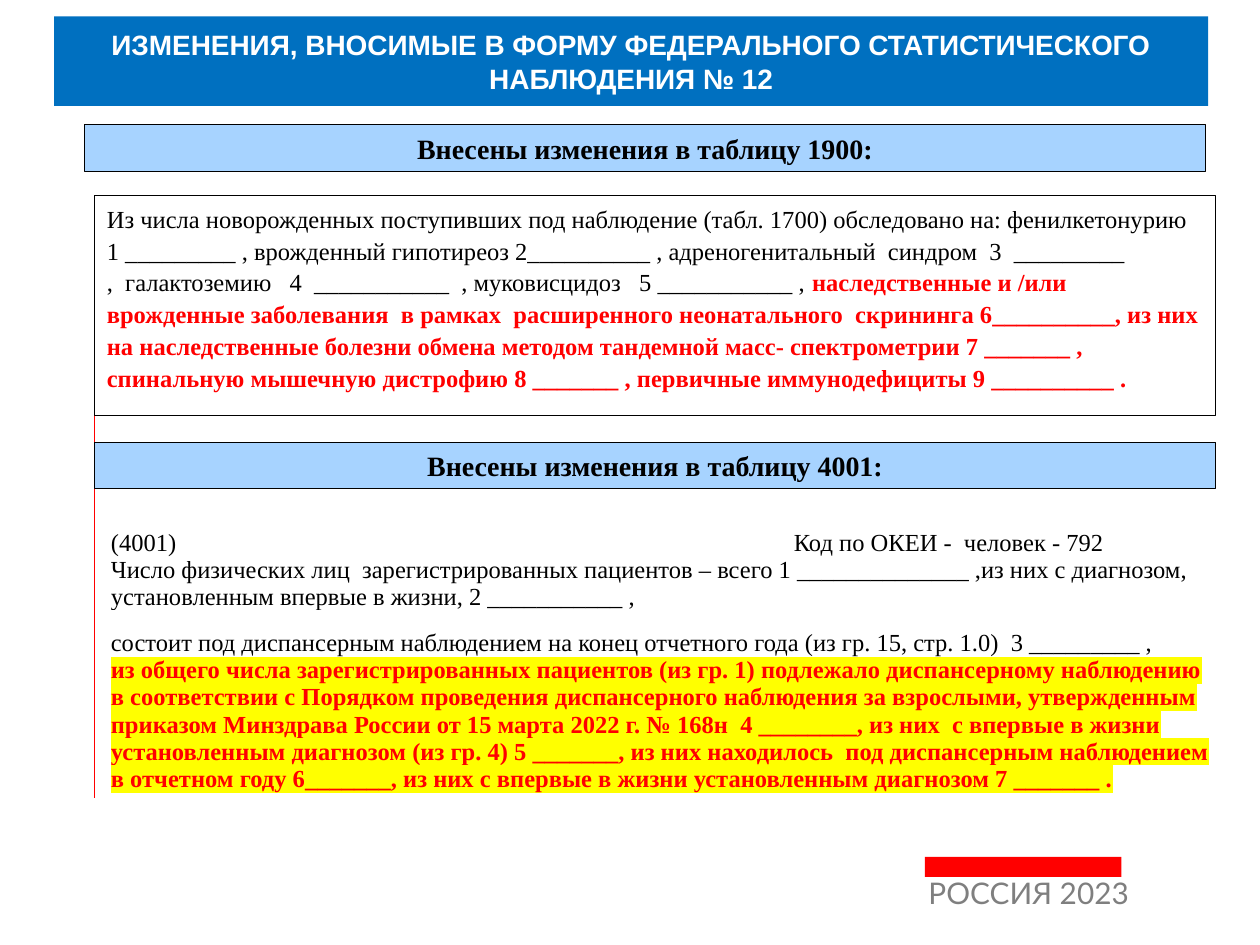
from lxml import etree
from pptx import Presentation
from pptx.dml.color import RGBColor
from pptx.enum.shapes import MSO_CONNECTOR, MSO_SHAPE
from pptx.enum.text import MSO_ANCHOR, PP_ALIGN
from pptx.oxml.ns import qn
from pptx.util import Inches, Pt

RECTANGLE = MSO_SHAPE.RECTANGLE
STRAIGHT = MSO_CONNECTOR.STRAIGHT
TOP, MIDDLE, BOTTOM = MSO_ANCHOR.TOP, MSO_ANCHOR.MIDDLE, MSO_ANCHOR.BOTTOM
LEFT, CENTER = PP_ALIGN.LEFT, PP_ALIGN.CENTER

SERIF = "Times New Roman"
BLACK, WHITE, RED = "000000", "FFFFFF", "FF0000"
BLUE, LIGHT_BLUE, GRAY, YELLOW = "0070C0", "A7D3FF", "7F7F7F", "FFFF00"

SCREENING = (
    "Из числа новорожденных поступивших под наблюдение (табл. 1700) обследовано на: "
    "фенилкетонурию   1 _________ , врожденный гипотиреоз 2__________ , "
    "адреногенитальный  синдром  3  _________ \t,  галактоземию   4  ___________  , "
    "муковисцидоз   5 ___________ , "
)
SCREENING_ADDED = (
    "наследственные и /или врожденные заболевания  в рамках  расширенного неонатального  "
    "скрининга 6__________, из них на наследственные болезни обмена методом тандемной "
    "масс- спектрометрии 7 _______ , спинальную мышечную дистрофию 8 _______ , "
    "первичные иммунодефициты 9 __________ ."
)
CODE_LINE = "(4001)\tКод по ОКЕИ -  человек - 792"
PATIENTS = (
    "Число физических лиц  зарегистрированных пациентов – всего 1 ______________ ,"
    "из них с диагнозом, установленным впервые в жизни, 2 ___________ ,"
)
OBSERVED = (
    "состоит под диспансерным наблюдением на конец отчетного года "
    "(из гр. 15, стр. 1.0)  3 _________ , "
)
OBSERVED_ADDED = (
    "из общего числа зарегистрированных пациентов (из гр. 1) подлежало диспансерному "
    "наблюдению в соответствии с Порядком проведения диспансерного наблюдения за взрослыми, "
    "утвержденным приказом Минздрава России от 15 марта 2022 г. № 168н  4 ________, "
    "из них  с впервые в жизни установленным диагнозом (из гр. 4) 5 _______, "
    "из них находилось  под диспансерным наблюдением в отчетном году 6_______, "
    "из них с впервые в жизни установленным диагнозом 7 _______ ."
)


def color(value):
    return RGBColor.from_string(value)


def format_span(span, size, font=SERIF, ink=BLACK, bold=False):
    span.font.size = Pt(size)
    span.font.name = font
    span.font.bold = bold
    span.font.color.rgb = color(ink)


def highlight(span, value):
    mark = etree.Element(qn("a:highlight"))
    etree.SubElement(mark, qn("a:srgbClr"), val=value)
    span.font._element.find(qn("a:solidFill")).addnext(mark)


def set_tabs(para, stops):
    tabs = etree.SubElement(para._p.get_or_add_pPr(), qn("a:tabLst"))
    for position, alignment in stops:
        etree.SubElement(tabs, qn("a:tab"), pos=str(Inches(position)), algn=alignment)


def add_box(page, left, top, width, height, fill=None, line=None):
    box = page.shapes.add_shape(
        RECTANGLE, Inches(left), Inches(top), Inches(width), Inches(height)
    )
    box.shadow.inherit = False
    if fill:
        box.fill.solid()
        box.fill.fore_color.rgb = color(fill)
    else:
        box.fill.background()
    if line:
        box.line.color.rgb = color(line)
        box.line.width = Pt(0.75)
    else:
        box.line.fill.background()
    return box


def add_heading(box, text, font, ink):
    box.text_frame.text = text
    box.text_frame.vertical_anchor = MIDDLE
    para = box.text_frame.paragraphs[0]
    para.alignment = CENTER
    format_span(para.runs[0], 16, font, ink, True)


def add_side_line(page, x, top, bottom):
    line = page.shapes.add_connector(
        STRAIGHT, Inches(x), Inches(top), Inches(x), Inches(bottom)
    )
    line.line.color.rgb = color(RED)
    line.line.width = Pt(0.75)
    etree.SubElement(line._element.spPr, qn("a:effectLst"))


def add_footer(page):
    box = page.shapes.add_textbox(Inches(7.27), Inches(6.95), Inches(1.88), Inches(0.47))
    box.text_frame.word_wrap = True
    box.text_frame.text = "РОССИЯ 2023"
    para = box.text_frame.paragraphs[0]
    para.line_spacing = 0.8
    format_span(para.runs[0], 17, "Lato", GRAY)
    add_box(page, 7.34, 6.8, 1.56, 0.16, RED)


def add_screening(page):
    box = add_box(page, 0.75, 1.55, 8.9, 1.75, line=BLACK)
    box.text_frame.vertical_anchor = TOP
    para = box.text_frame.paragraphs[0]
    para.text = SCREENING
    para.add_run().text = SCREENING_ADDED
    para.alignment = LEFT
    para.line_spacing = 1.08
    set_tabs(para, [(6.94, "ctr"), (8.12, "r"), (9.99, "l"), (10.88, "l")])
    format_span(para.runs[0], 14)
    format_span(para.runs[1], 14, ink=RED, bold=True)


def add_patient_table(page):
    heights = [0.71, 1.87]
    rows = [[CODE_LINE, PATIENTS], [OBSERVED, OBSERVED_ADDED]]
    bottoms = [0, 0.43]
    table = page.shapes.add_table(
        2, 1, Inches(0.83), Inches(4.14), Inches(8.82), Inches(sum(heights))
    ).table
    table.first_row = False
    table.horz_banding = False
    for index, texts in enumerate(rows):
        table.rows[index].height = Inches(heights[index])
        cell = table.cell(index, 0)
        cell.fill.background()
        cell.vertical_anchor = BOTTOM
        cell.margin_left = cell.margin_right = Inches(0.05)
        cell.margin_top = 0
        cell.margin_bottom = Inches(bottoms[index])
        cell.text_frame.text = "\n".join(texts)
        for para in cell.text_frame.paragraphs:
            para.alignment = LEFT
            added = para.text == OBSERVED_ADDED
            for span in para.runs:
                format_span(span, 14, ink=RED if added else BLACK, bold=added)
                if added:
                    highlight(span, YELLOW)
    set_tabs(table.cell(0, 0).text_frame.paragraphs[0], [(5.42, "l")])


def main():
    deck = Presentation()
    deck.slide_width = Inches(10)
    deck.slide_height = Inches(7.5)
    page = deck.slides.add_slide(deck.slide_layouts[6])
    add_footer(page)
    add_side_line(page, 0.75, 2.81, 6.33)
    title = add_box(page, 0.43, 0.13, 9.16, 0.71, BLUE)
    add_heading(
        title,
        "ИЗМЕНЕНИЯ, ВНОСИМЫЕ В ФОРМУ ФЕДЕРАЛЬНОГО СТАТИСТИЧЕСКОГО НАБЛЮДЕНИЯ № 12",
        "Arial",
        WHITE,
    )
    add_screening(page)
    add_patient_table(page)
    for left, top, number in [(0.67, 0.99, 1900), (0.75, 3.51, 4001)]:
        banner = add_box(page, left, top, 8.9, 0.37, LIGHT_BLUE, BLACK)
        add_heading(banner, f"Внесены изменения в таблицу {number}:", SERIF, BLACK)
    deck.save("out.pptx")


main()
